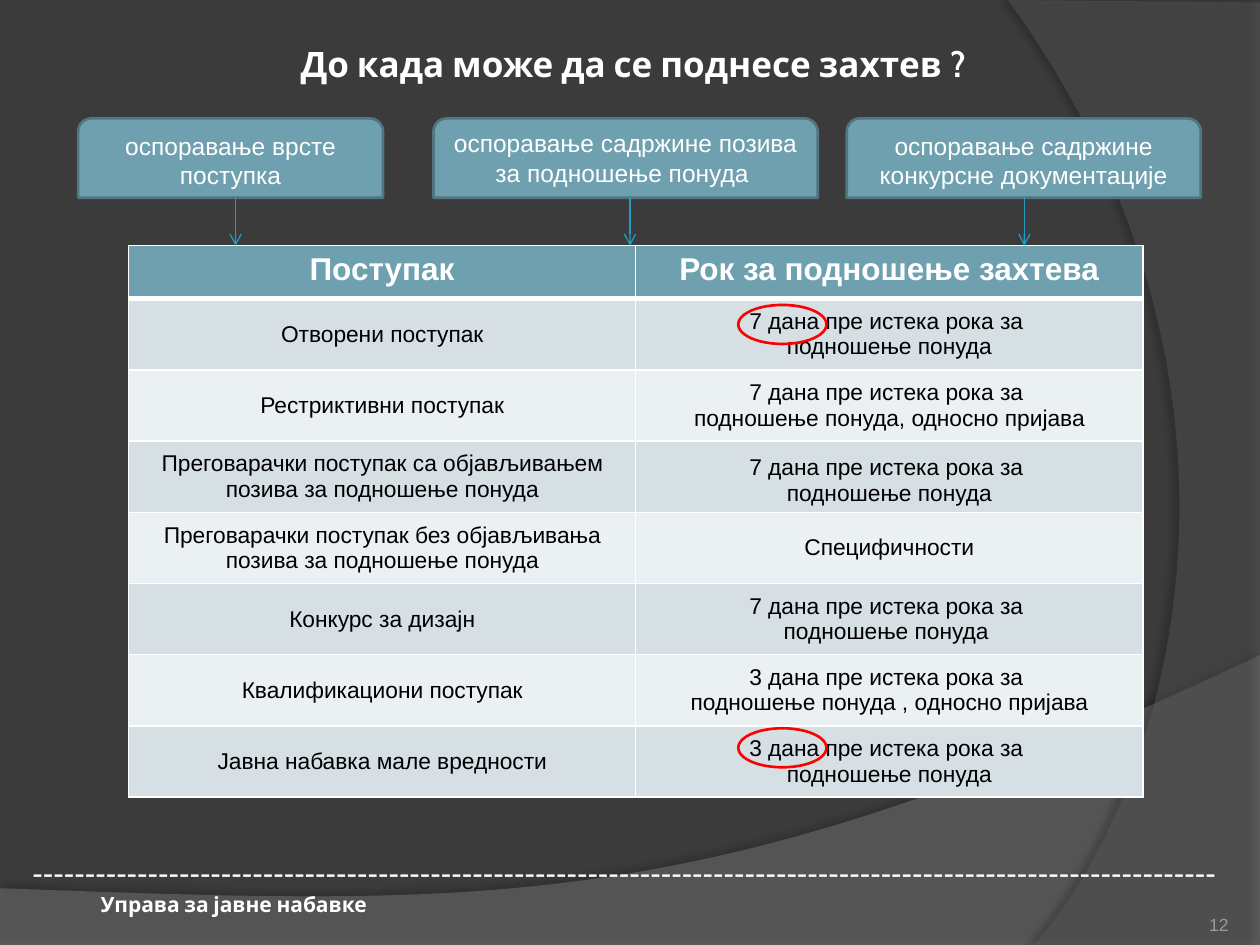
from pptx import Presentation
from pptx.dml.color import RGBColor
from pptx.enum.shapes import MSO_CONNECTOR, MSO_SHAPE
from pptx.enum.text import MSO_ANCHOR, PP_ALIGN
from pptx.oxml import parse_xml
from pptx.oxml.ns import nsdecls, qn
from pptx.util import Inches, Pt

TAB, OVAL = MSO_SHAPE.ROUND_2_SAME_RECTANGLE, MSO_SHAPE.OVAL
LINE = MSO_CONNECTOR.STRAIGHT
TOP, MID, LOW = MSO_ANCHOR.TOP, MSO_ANCHOR.MIDDLE, MSO_ANCHOR.BOTTOM
LEFT, CENTER, RIGHT = PP_ALIGN.LEFT, PP_ALIGN.CENTER, PP_ALIGN.RIGHT
INK = {"back": "3B3B3B", "wave": "7F7F7F", "arc": "5E5E5E", "white": "FFFFFF",
       "black": "000000", "teal": "6EA0B0", "edge": "517682", "arrow": "239BC2",
       "red": "FF0000", "page": "9D9B9A", "odd": "D5DFE4", "even": "EBF0F2"}


def bezier(start, one, two, end, steps=60):
    points = []
    for i in range(1, steps + 1):
        t = i / steps
        u = 1 - t
        parts = (u ** 3, 3 * u * u * t, 3 * u * t * t, t ** 3)
        points.append(tuple(sum(w * p[k] for w, p in zip(parts, (start, one, two, end)))
                            for k in (0, 1)))
    return points


class Deck:
    def __init__(self, ink, font="Arial"):
        self.ink, self.font = ink, font
        self.prs = Presentation()
        self.prs.slide_width, self.prs.slide_height = Inches(10), Inches(7.5)
        self.slide = self.prs.slides.add_slide(self.prs.slide_layouts[5])
        self.shapes = self.slide.shapes
        self.paint(self.slide.background.fill, "back")

    def color(self, name):
        return RGBColor.from_string(self.ink[name])

    def paint(self, fill, name):
        fill.solid()
        fill.fore_color.rgb = self.color(name)

    def put(self, frame, lines, size, name="white", bold=False, align=CENTER, font=None):
        for i, line in enumerate(lines):
            para = frame.add_paragraph() if i else frame.paragraphs[0]
            para.alignment = align
            run = para.add_run()
            run.text = line
            run.font.name, run.font.size = font or self.font, Pt(size)
            run.font.bold = bold
            run.font.color.rgb = self.color(name)

    def wave(self, points, name, alpha, shade, dist, angle):
        spots = [(Inches(x), Inches(y)) for x, y in points]
        form = self.shapes.build_freeform(*spots[0])
        form.add_line_segments(spots[1:], close=True)
        shape = form.convert_to_shape()
        self.paint(shape.fill, name)
        shape.line.fill.background()
        props = shape._element.spPr
        tint = props.find(qn("a:solidFill"))[0]
        tint.append(parse_xml(f'<a:alpha {nsdecls("a")} val="{alpha * 1000}"/>'))
        props.append(parse_xml(
            f'<a:effectLst {nsdecls("a")}><a:outerShdw blurRad="{Pt(4)}" dist="{Pt(dist)}" '
            f'dir="{angle * 60000}" rotWithShape="0"><a:srgbClr val="{self.ink["black"]}">'
            f'<a:alpha val="{shade * 1000}"/></a:srgbClr></a:outerShdw></a:effectLst>'))

    def title(self, box, text):
        shape = self.shapes.title
        self.shapes._spTree.append(shape._element)
        shape.left, shape.top, shape.width, shape.height = map(Inches, box)
        frame = shape.text_frame
        frame.vertical_anchor = MID
        frame.margin_left = frame.margin_right = Inches(0.05)
        self.put(frame, [text], 20, bold=True, font="Cabin")

    def text(self, box, text, size, wrap=True, anchor=TOP, inset=None, **style):
        frame = self.shapes.add_textbox(*map(Inches, box)).text_frame
        frame.word_wrap, frame.vertical_anchor = wrap, anchor
        if inset is not None:
            frame.margin_left = frame.margin_right = Inches(inset)
            frame.margin_top = frame.margin_bottom = Inches(inset)
        self.put(frame, [text], size, **style)

    def shape(self, kind, box, edge, fill=None, text=None, anchor=MID):
        shape = self.shapes.add_shape(kind, *map(Inches, box))
        shape.shadow.inherit = False
        if fill:
            self.paint(shape.fill, fill)
        else:
            shape.fill.background()
        shape.line.color.rgb, shape.line.width = self.color(edge), Pt(1.5)
        if text:
            shape.text_frame.word_wrap = True
            shape.text_frame.vertical_anchor = anchor
            self.put(shape.text_frame, [text], 14)

    def arrow(self, x, top, end):
        line = self.shapes.add_connector(LINE, *map(Inches, (x, top, x, end)))
        line.line.color.rgb, line.line.width = self.color("arrow"), Pt(0.75)
        props = line._element.spPr
        props.find(qn("a:ln")).append(
            parse_xml(f'<a:tailEnd {nsdecls("a")} type="arrow"/>'))
        props.append(parse_xml(f'<a:effectLst {nsdecls("a")}/>'))

    def cell(self, cell, lines, fill, anchor=MID, size=13, name="black", bold=False, low=1):
        cell.vertical_anchor = anchor
        self.paint(cell.fill, fill)
        self.put(cell.text_frame, lines, size, name, bold)
        props = cell._tc.get_or_add_tcPr()
        for i, (side, width) in enumerate(zip("LRTB", (1, 1, 1, low))):
            props.insert(i, parse_xml(
                f'<a:ln{side} {nsdecls("a")} w="{Pt(width)}"><a:solidFill>'
                f'<a:srgbClr val="{self.ink["white"]}"/></a:solidFill></a:ln{side}>'))

    def table(self, box, head, rows, first):
        grid = self.shapes.add_table(len(rows) + 1, 2, *map(Inches, box)).table
        grid.rows[0].height = Inches(first)
        for c, text in enumerate(head):
            self.cell(grid.cell(0, c), [text], "teal", TOP, 18, "white", True, 3)
        for r, (name, limit, anchor) in enumerate(rows, 1):
            grid.rows[r].height = Inches((box[3] - first) / len(rows))
            fill = "odd" if r % 2 else "even"
            self.cell(grid.cell(r, 0), [name], fill)
            self.cell(grid.cell(r, 1), limit, fill, anchor)


def term(days, tail="подношење понуда"):
    return [f"{days} дана пре истека рока за ", tail]


def main():
    deck = Deck(INK)
    deck.wave([(0, 7.05), (0, 7.5), (10, 7.5), (10, 5.2)]
              + bezier((10, 5.2), (5.59, 7.29), (3.91, 7.19), (0, 7.05)),
              "wave", 45, 35, 3.5, 270)
    deck.wave([(10, 0.02), (10, 7.5), (8.21, 7.5)]
              + bezier((8.21, 7.5), (9.35, 6.19), (10.18, 3), (8, 0)),
              "arc", 40, 45, 4, 180)
    deck.title((0.55, 0.23, 8.95, 0.55), "До када може да се поднесе захтев ?")
    deck.text((0.16, 6.72, 9.63, 0.4), "-" * 113, 18, wrap=False, align=LEFT)
    deck.text((0.7, 7.03, 3.13, 0.3), "Управа за јавне набавке", 12,
              bold=True, align=LEFT, font="Cabin")
    deck.text((8.92, 7.02, 0.83, 0.4), "12", 10, anchor=LOW, inset=0,
              name="page", align=RIGHT)

    rows = [
        ("Отворени поступак", term(7), MID),
        ("Рестриктивни поступак", term(7, "подношење понуда, односно пријава"), MID),
        ("Преговарачки поступак са објављивањем позива за подношење понуда", term(7), LOW),
        ("Преговарачки поступак без објављивања позива за подношење понуда",
         ["Специфичности"], MID),
        ("Конкурс за дизајн", term(7, "подношење понуда "), MID),
        ("Квалификациони поступак", term(3, "подношење понуда , oдносно пријава"), MID),
        ("Јавна набавка мале вредности", term(3), MID),
    ]
    deck.table((1.02, 1.95, 8.05, 4.38), ("Поступак", "Рок за подношење захтева"),
               rows, 0.42)

    claims = [
        (0.62, 2.42, "оспоравање врсте поступка", MID, 1.87),
        (3.44, 3.05, "оспоравање садржине позива за подношење понуда ", TOP, 5),
        (6.72, 2.81, "оспоравање садржине конкурсне документације", MID, 8.13),
    ]
    for left, width, text, anchor, x in claims:
        deck.shape(TAB, (left, 0.94, width, 0.63), "edge", "teal", text, anchor)
        deck.arrow(x, 1.56, 1.95)
    for top in (2.42, 5.78):
        deck.shape(OVAL, (5.86, top, 0.7, 0.31), "red")
    deck.prs.save("out.pptx")


if __name__ == "__main__":
    main()
